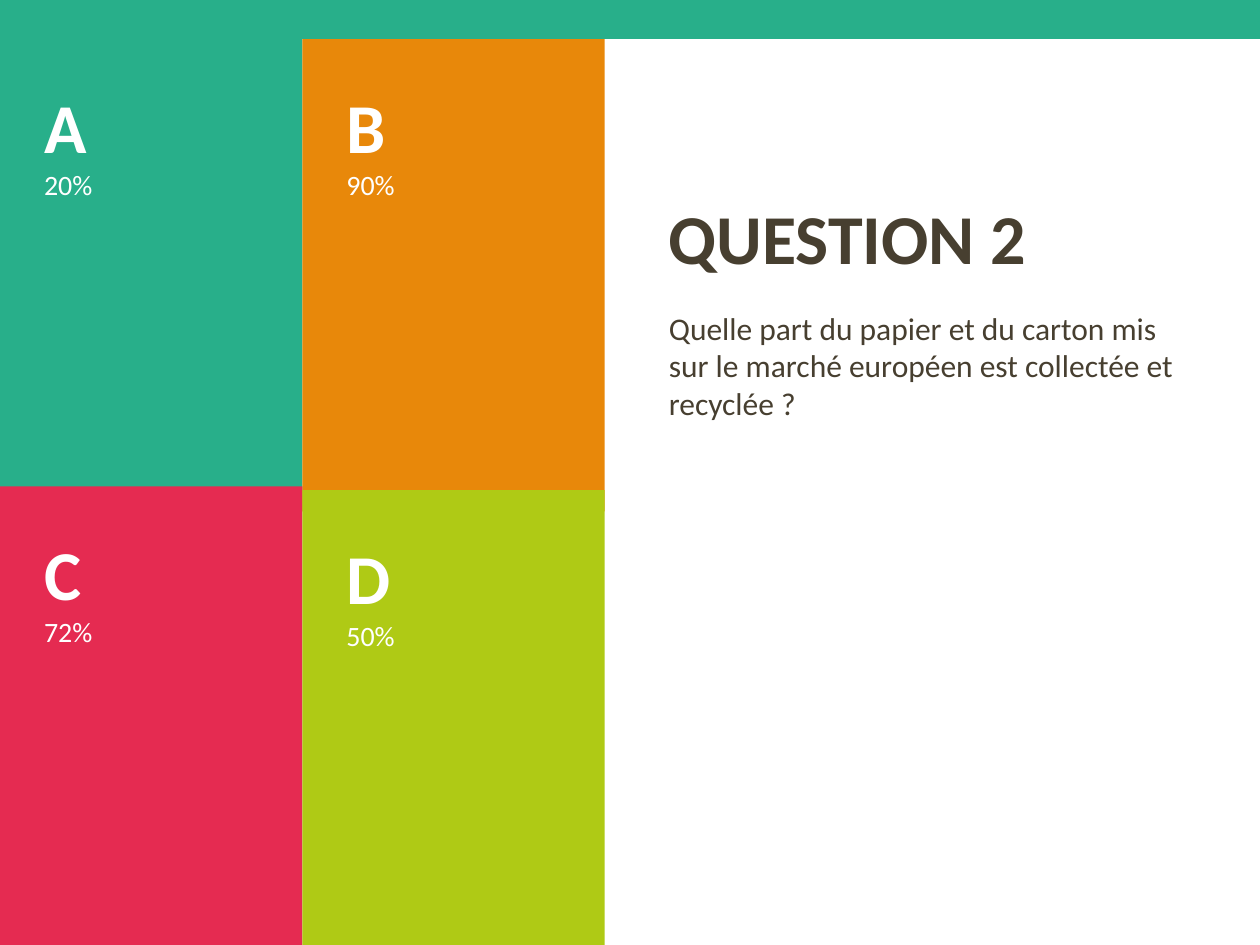
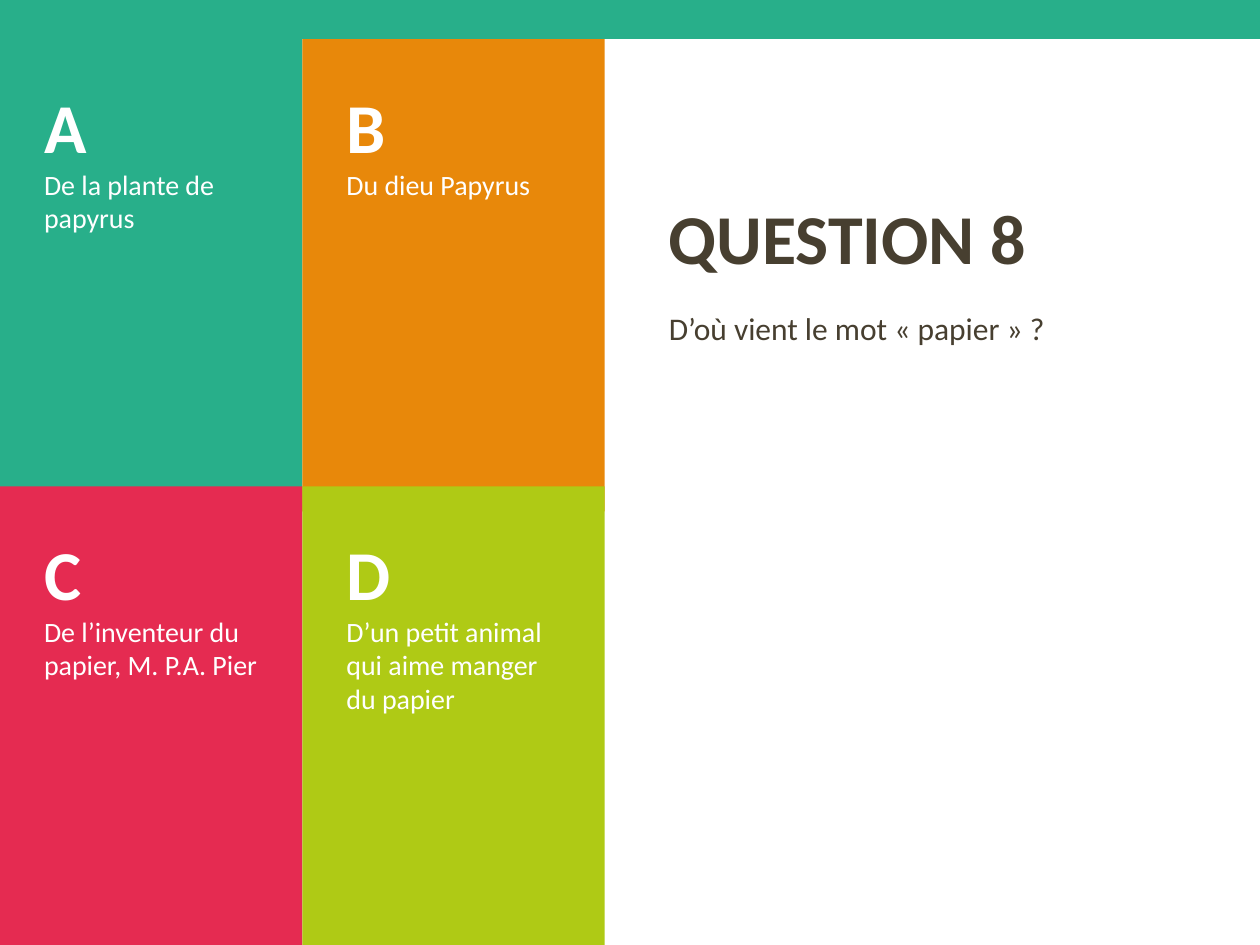
from dataclasses import dataclass

from pptx import Presentation
from pptx import util as u
from pptx.dml.color import RGBColor
from pptx.enum import shapes, text


@dataclass(frozen=True)
class Theme:
    """Colours, type sizes and the answer grid shared by all slides."""
    font: str = "Calibri"
    ink: str = "473F30"
    white: str = "FFFFFF"
    band: str = "28AF8A"
    tiles: tuple = ("28AF8A", "E8880A", "E52B51", "AFCA15")
    heading: int = 40
    body: int = 18
    answer: int = 16
    band_height: float = 0.31
    band_width: float = 10.03
    column: float = 2.4
    row_tops: tuple = (0.31, 3.86)
    row_heights: tuple = (3.75, 3.64)
    padding: float = 0.35
    text_left: float = 5.21
    text_width: float = 4.28


T = Theme()

QUESTIONS = [
    ("QUESTION 2",
     "Quelle part du papier et du carton mis sur le marché européen est collectée et recyclée ?",
     ("20%", "90%", "72%", "50%"), 0.03),
    ("QUESTION 8",
     "D’où vient le mot « papier » ?",
     ("De la plante de papyrus", "Du dieu Papyrus",
      "De l’inventeur du papier, M. P.A. Pier",
      "D’un petit animal qui aime manger du papier"), 0),
]


def style(p, size, color, bold=False):
    """Format every run of a left-aligned paragraph."""
    p.alignment = text.PP_ALIGN.LEFT
    for r in p.runs:
        r.font.name = T.font
        r.font.size = u.Pt(size)
        r.font.bold = bold
        r.font.color.rgb = RGBColor.from_string(color)


def add_block(s, left, top, width, height, color):
    """Add a flat rectangle without outline."""
    sp = s.shapes.add_shape(shapes.MSO_SHAPE.RECTANGLE,
                            *map(u.Inches, (left, top, width, height)))
    sp.shadow.inherit = False
    sp.fill.solid()
    sp.fill.fore_color.rgb = RGBColor.from_string(color)
    sp.line.fill.background()
    return sp


def add_answer(s, index, answer, drop):
    """Add one lettered answer tile at its place in the two-by-two grid."""
    row, col = divmod(index, 2)
    sp = add_block(s, col * T.column, T.row_tops[row] + drop,
                   T.column, T.row_heights[row], T.tiles[index])
    tf = sp.text_frame
    tf.word_wrap = True
    tf.vertical_anchor = text.MSO_ANCHOR.TOP
    tf.margin_left = tf.margin_right = u.Inches(T.padding)
    tf.margin_top = tf.margin_bottom = u.Inches(T.padding)
    tf.text = f"{'ABCD'[index]}\n{answer}"
    letter, caption = tf.paragraphs
    style(letter, T.heading, T.white, bold=True)
    style(caption, T.answer, T.white)


def add_text(s, top, height, content, size, anchor, bold=False):
    """Add a text box in the question column."""
    sp = s.shapes.add_textbox(*map(u.Inches, (T.text_left, top, T.text_width, height)))
    tf = sp.text_frame
    tf.word_wrap = True
    tf.vertical_anchor = anchor
    tf.text = content
    style(tf.paragraphs[0], size, T.ink, bold)


def add_question(prs, title, question, answers, last_drop):
    """Add a slide with a question and its four answers."""
    s = prs.slides.add_slide(prs.slide_layouts[6])
    add_text(s, 1.31, 0.95, title, T.heading, text.MSO_ANCHOR.BOTTOM, bold=True)
    add_text(s, 2.4, 2.49, question, T.body, text.MSO_ANCHOR.TOP)
    for index, answer in enumerate(answers):
        add_answer(s, index, answer, last_drop if index == 3 else 0)
    add_block(s, 0, 0, T.band_width, T.band_height, T.band)


def main():
    """Build the quiz slides and save them."""
    prs = Presentation()
    prs.slide_width, prs.slide_height = u.Inches(10), u.Inches(7.5)
    for question in QUESTIONS:
        add_question(prs, *question)
    prs.save("out.pptx")


if __name__ == "__main__":
    main()
